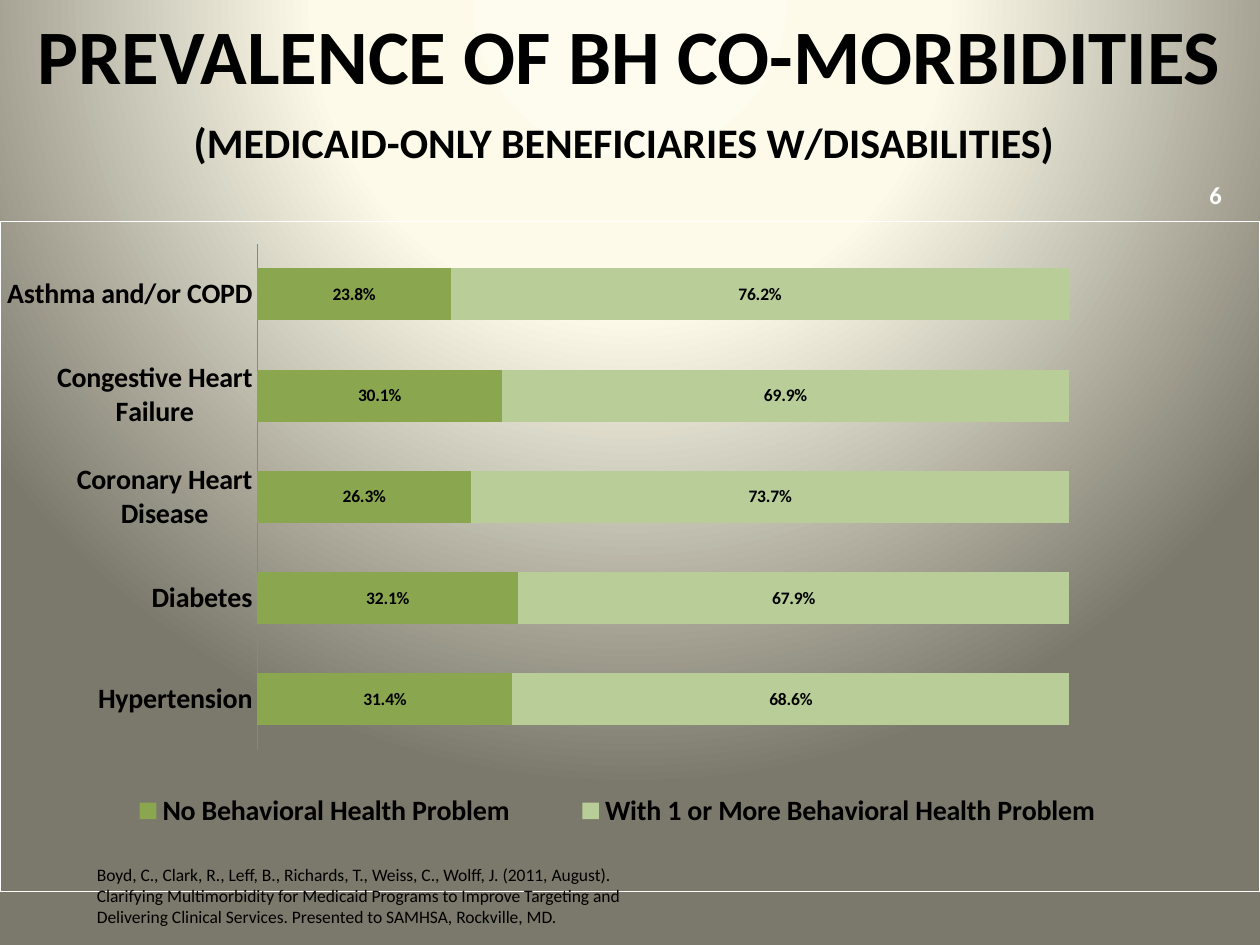
from pptx import Presentation
from pptx.chart.data import CategoryChartData
from pptx.dml.color import RGBColor
from pptx.enum.chart import XL_CHART_TYPE, XL_LEGEND_POSITION, XL_TICK_MARK
from pptx.enum.text import MSO_ANCHOR, PP_ALIGN
from pptx.oxml import parse_xml
from pptx.oxml.ns import nsdecls
from pptx.util import Inches, Pt

STACKED_BAR = XL_CHART_TYPE.BAR_STACKED
LEGEND_TOP = XL_LEGEND_POSITION.TOP
NO_TICK = XL_TICK_MARK.NONE
TOP, MIDDLE = MSO_ANCHOR.TOP, MSO_ANCHOR.MIDDLE
LEFT, CENTER = PP_ALIGN.LEFT, PP_ALIGN.CENTER

FONT = "Calibri"
COLORS = {"text": "000000", "white": "FFFFFF", "axis": "8A887A",
          "no_problem": "8AA64F", "with_problem": "B8CD97"}
BACKGROUND_STOPS = [(0, "FEFCEE"), (40, "FDFAEA"), (100, "7B796B")]

TITLE_RUNS = [("PREVALENCE OF BH CO-MORBIDITIES\n", 44),
              ("(MEDICAID-ONLY BENEFICIARIES W/DISABILITIES)", 24), (" ", 30)]
CITATION = ("Boyd, C., Clark, R., Leff, B., Richards, T., Weiss, C., Wolff, J. (2011, August). \n"
            "Clarifying Multimorbidity for Medicaid Programs to Improve Targeting and "
            "Delivering Clinical Services. Presented to SAMHSA, Rockville, MD.")
CONDITIONS = ["Hypertension", "Diabetes", "Coronary Heart Disease",
              "Congestive Heart Failure", "Asthma and/or COPD"]
SERIES = [
    ("No Behavioral Health Problem", "no_problem",
     [0.314, 0.321, 0.263, 0.301, 0.238]),
    ("With 1 or More Behavioral Health Problem", "with_problem",
     [0.686, 0.679, 0.737, 0.699, 0.762]),
]


def rgb(name):
    return RGBColor.from_string(COLORS[name])


def style_font(font, size, color="text", bold=False):
    font.name = FONT
    font.size = Pt(size)
    font.bold = bold
    font.color.rgb = rgb(color)


def set_background(slide):
    """Radial gradient centred above the slide."""
    stops = "".join(f'<a:gs pos="{pos * 1000}"><a:srgbClr val="{color}"/></a:gs>'
                    for pos, color in BACKGROUND_STOPS)
    bg = parse_xml(
        f'<p:bg {nsdecls("p", "a")}><p:bgPr><a:gradFill rotWithShape="1">'
        f'<a:gsLst>{stops}</a:gsLst><a:path path="circle">'
        '<a:fillToRect l="50000" t="-80000" r="50000" b="180000"/></a:path>'
        '</a:gradFill><a:effectLst/></p:bgPr></p:bg>')
    slide.element.cSld.insert(0, bg)


def add_text(slide, box, runs, color="text", bold=False, align=LEFT, anchor=TOP):
    """Add one paragraph of (text, size) runs; a newline ending a run breaks the line."""
    tf = slide.shapes.add_textbox(*map(Inches, box)).text_frame
    tf.word_wrap = True
    tf.vertical_anchor = anchor
    p = tf.paragraphs[0]
    p.alignment = align
    for text, size in runs:
        lines = text.split("\n")
        for i, line in enumerate(lines):
            if i:
                p.add_line_break()
            if line:
                r = p.add_run()
                r.text = line
                style_font(r.font, size, color, bold)
    return p


def set_layout(parent, index, x, y, w, h, inner=False):
    """Place a chart part by fractions of the chart area."""
    for old in parent.findall("{*}layout"):
        parent.remove(old)
    target = '<c:layoutTarget val="inner"/>' if inner else ""
    parent.insert(index, parse_xml(
        f'<c:layout {nsdecls("c")}><c:manualLayout>{target}'
        '<c:xMode val="edge"/><c:yMode val="edge"/>'
        f'<c:x val="{x}"/><c:y val="{y}"/><c:w val="{w}"/><c:h val="{h}"/>'
        '</c:manualLayout></c:layout>'))


def style_series(series, color):
    series.format.fill.solid()
    series.format.fill.fore_color.rgb = rgb(color)
    series.invert_if_negative = False
    labels = series.data_labels
    labels.show_value = True
    labels.number_format = "0.0%"
    labels.number_format_is_linked = False
    style_font(labels.font, 10, bold=True)


def style_axes(chart):
    category = chart.category_axis
    category.major_tick_mark = category.minor_tick_mark = NO_TICK
    category.format.line.color.rgb = rgb("axis")
    style_font(category.tick_labels.font, 16, bold=True)
    value = chart.value_axis
    value.minimum_scale, value.maximum_scale = 0, 1.2
    value.has_major_gridlines = False
    value.tick_labels.number_format = "0.0%"
    value.tick_labels.number_format_is_linked = False
    value.visible = False


def add_border(chart):
    chart.font._element.getparent().getparent().getparent().getparent().addprevious(parse_xml(
        f'<c:spPr {nsdecls("c", "a")}><a:noFill/><a:ln w="{Pt(0.75)}"><a:solidFill>'
        f'<a:srgbClr val="{COLORS["white"]}"/></a:solidFill></a:ln></c:spPr>'))


def add_prevalence_chart(slide):
    data = CategoryChartData(number_format="0.0%")
    data.categories = CONDITIONS
    for name, _, values in SERIES:
        data.add_series(name, values)
    box = map(Inches, (0, 1.75, 10, 5.33))
    chart = slide.shapes.add_chart(STACKED_BAR, *box, data).chart
    chart.has_title = False
    style_font(chart.font, 10)
    plot = chart.plots[0]
    plot.gap_width, plot.overlap = 95, 100
    plot.vary_by_categories = False
    for series, (_, color, _) in zip(plot.series, SERIES):
        style_series(series, color)
    style_axes(chart)

    chart.has_legend = True
    legend = chart.legend
    legend.position = LEGEND_TOP
    legend.include_in_layout = False
    style_font(legend.font, 16, bold=True)
    set_layout(legend._element, 1, 0.06, 0.84, 0.86, 0.08)
    plot_area = chart._chartSpace.chart.plotArea
    set_layout(plot_area, 0, 0.204, 0.034, 0.774, 0.755, inner=True)
    chart._chartSpace.chart.addnext(parse_xml(
        f'<c:spPr {nsdecls("c", "a")}><a:noFill/><a:ln w="{Pt(0.75)}"><a:solidFill>'
        f'<a:srgbClr val="{COLORS["white"]}"/></a:solidFill></a:ln></c:spPr>'))


def main():
    prs = Presentation()
    prs.slide_width, prs.slide_height = Inches(10), Inches(7.5)
    slide = prs.slides.add_slide(prs.slide_layouts[6])
    set_background(slide)
    add_text(slide, (9.5, 1.42, 0.5, 0.25), [("6", 14)], "white", True, anchor=MIDDLE)
    title = add_text(slide, (0, 0, 10, 1.33), TITLE_RUNS, bold=True,
                     align=CENTER, anchor=MIDDLE)
    title.line_spacing = 1.1
    add_prevalence_chart(slide)
    add_text(slide, (0.67, 6.81, 4.92, 0.61), [(CITATION, 10)])
    prs.save("out.pptx")


if __name__ == "__main__":
    main()
